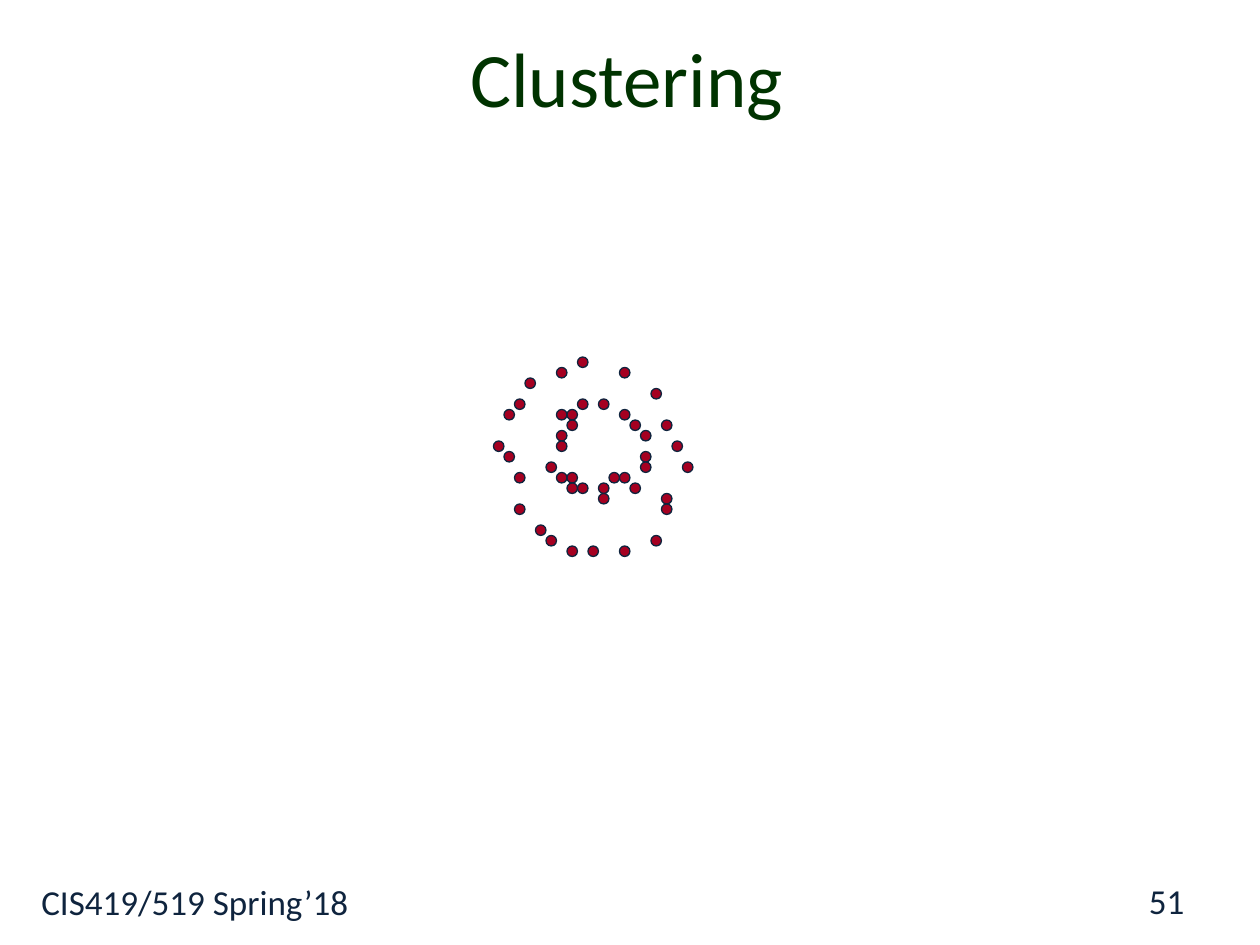
import pptx
import pptx.dml.color
import pptx.enum.shapes
import pptx.enum.text
import pptx.util
from typing import Any, NamedTuple

COLORS = {"title": "003300", "ink": "0F243E", "dot": "A50021"}
FONT = "Calibri"
CELL = pptx.util.Inches(1) / 12  # a dot fills one cell of a 120 x 90 grid
ALIGN = pptx.enum.text.PP_ALIGN
ANCHOR = pptx.enum.text.MSO_ANCHOR


class Dot(NamedTuple):
    col: int
    row: int


class Label(NamedTuple):
    text: str
    left: float
    top: float
    width: float
    height: float
    size: int
    color: str
    align: Any
    anchor: Any
    wrap: bool = True


OUTER_RING = [Dot(*d) for d in (
    (50, 36), (53, 35), (55, 34), (59, 35), (62, 37), (63, 40), (64, 42), (65, 44),
    (48, 39), (47, 42), (49, 45), (51, 50), (49, 48), (54, 52), (59, 52), (62, 51),
    (63, 48), (63, 47), (49, 38), (48, 43), (52, 51), (56, 52))]
INNER_RING = [Dot(*d) for d in (
    (54, 39), (55, 38), (57, 38), (59, 39), (60, 40), (61, 41), (61, 43), (61, 44),
    (54, 40), (53, 41), (52, 44), (54, 45), (53, 45), (55, 46), (57, 47), (60, 46),
    (59, 45), (57, 46), (53, 39), (53, 42), (54, 46), (58, 45))]

TITLE = Label("Clustering", 3.62, 0.19, 2.71, 0.84, 44, "title",
              ALIGN.CENTER, ANCHOR.TOP, wrap=False)
FOOTER = Label("CIS419/519 Spring’18", 0.23, 6.94, 9.6, 0.56, 20, "ink",
               ALIGN.LEFT, ANCHOR.TOP)
NUMBER = Label("51", 7.17, 6.95, 2.33, 0.4, 20, "ink", ALIGN.RIGHT, ANCHOR.MIDDLE)


def rgb(name: str) -> pptx.dml.color.RGBColor:
    return pptx.dml.color.RGBColor.from_string(COLORS[name])


def write_label(sp: Any, label: Label) -> None:
    sp.left, sp.top, sp.width, sp.height = map(pptx.util.Inches, label[1:5])
    tf = sp.text_frame
    tf.text = label.text
    tf.word_wrap = label.wrap
    tf.auto_size = (pptx.enum.text.MSO_AUTO_SIZE.NONE if label.wrap
                    else pptx.enum.text.MSO_AUTO_SIZE.SHAPE_TO_FIT_TEXT)
    tf.vertical_anchor = label.anchor
    p = tf.paragraphs[0]
    p.alignment = label.align
    r = p.runs[0]
    r.font.name = FONT
    r.font.size = pptx.util.Pt(label.size)
    r.font.color.rgb = rgb(label.color)


def draw_dot(s: Any, dot: Dot) -> None:
    sp = s.shapes.add_shape(pptx.enum.shapes.MSO_SHAPE.OVAL, round(dot.col * CELL),
                            round(dot.row * CELL), round(CELL), round(CELL))
    sp.shadow.inherit = False
    sp.fill.solid()
    sp.fill.fore_color.rgb = rgb("dot")
    sp.line.color.rgb = rgb("ink")
    sp.line.width = pptx.util.Pt(0.75)


def main() -> None:
    prs = pptx.Presentation()
    prs.slide_width, prs.slide_height = pptx.util.Inches(10), pptx.util.Inches(7.5)
    s = prs.slides.add_slide(prs.slide_layouts[5])

    # Title, footer and page number
    write_label(s.shapes.title, TITLE)
    for label in (FOOTER, NUMBER):
        write_label(s.shapes.add_textbox(0, 0, 0, 0), label)

    # Two concentric rings of points
    for dot in OUTER_RING + INNER_RING:
        draw_dot(s, dot)

    prs.save("out.pptx")


if __name__ == "__main__":
    main()
